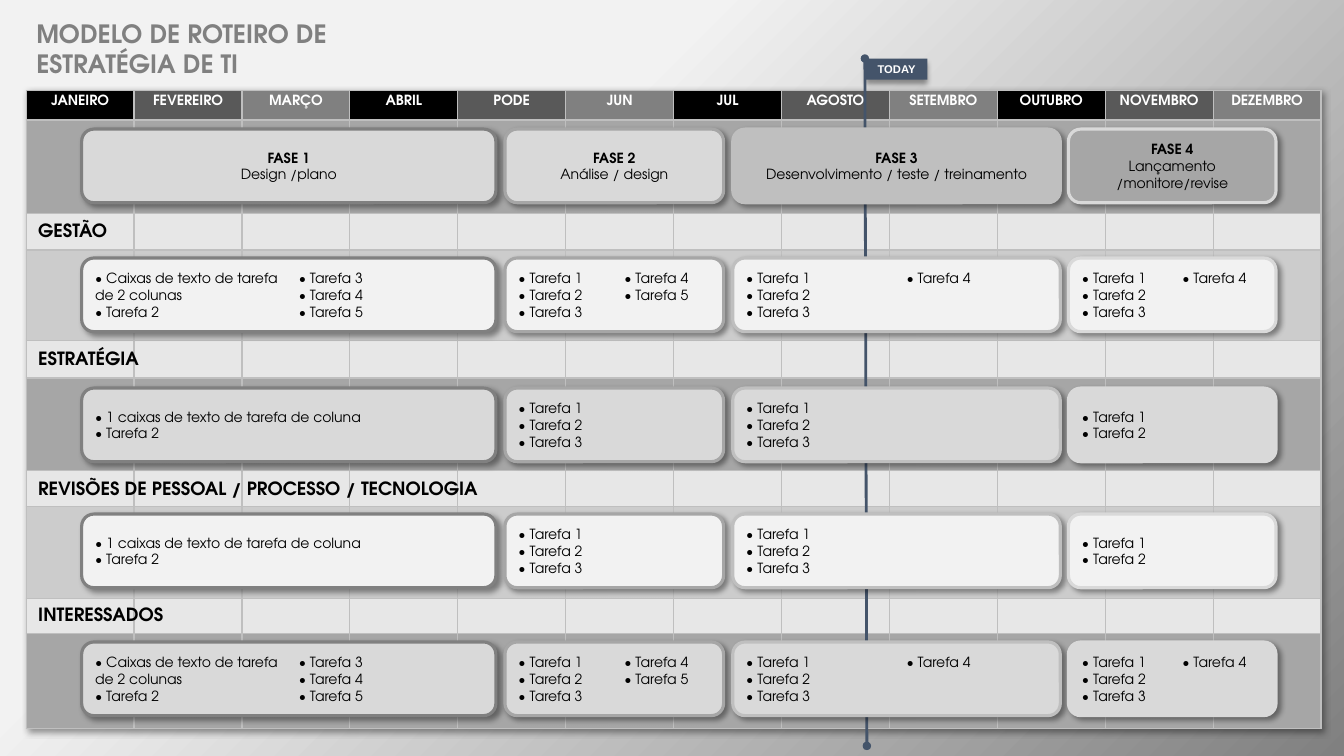
from dataclasses import dataclass
from itertools import product

from lxml.etree import SubElement
from pptx import Presentation
from pptx.dml.color import RGBColor
from pptx.enum.shapes import MSO_CONNECTOR as Connector, MSO_SHAPE as Shape
from pptx.enum.text import MSO_ANCHOR as Anchor, PP_ALIGN as Align
from pptx.oxml.ns import qn
from pptx.util import Pt


@dataclass(frozen=True)
class Theme:
    font: str = "TeX Gyre Adventor"
    flag_font: str = "Arial"
    title_size: float = 18
    section_size: float = 13
    body_size: float = 10
    flag_size: float = 8
    black: str = "000000"
    white: str = "FFFFFF"
    gray: str = "808080"
    pale: str = "F2F2F2"
    box: str = "D9D9D9"
    border: str = "BFBFBF"
    section: str = "E7E7E7"
    dark_band: str = "A6A6A6"
    light_band: str = "CCCCCC"
    today: str = "44546A"
    months: tuple = ("000000", "595959", "808080")
    outlines: tuple = ("808080", "A6A6A6", "BFBFBF", "D9D9D9")
    phases: tuple = ("D9D9D9", "D9D9D9", "BFBFBF", "A6A6A6")


THEME = Theme()
MONTHS = ["JANEIRO", "FEVEREIRO", "MARÇO", "ABRIL", "PODE", "JUN", "JUL",
          "AGOSTO", "SETEMBRO", "OUTUBRO", "NOVEMBRO", "DEZEMBRO"]
COLUMN_WIDTH = 77.1
ROW_HEIGHTS = [20.9, 67, 25.9, 64.8, 26.6, 66.2, 25.9, 65.5, 25.2, 67.7]
# Left edge and width of each phase
PHASE_SPANS = [(58.3, 295.9), (360.7, 156.2), (523.4, 234), (763.2, 148.3)]
PHASES = [("FASE 1", "Design /plano"), ("FASE 2", "Análise / design"),
          ("FASE 3", "Desenvolvimento / teste / treinamento"),
          ("FASE 4", "Lançamento /monitore/revise")]


def tasks(count, first="Tarefa 1"):
    names = [first] + [f"Tarefa {number}" for number in range(2, count + 1)]
    return [f"• {name}" for name in names]


TWO_COLUMNS = [tasks(5, "Caixas de texto de tarefa de 2 colunas"),
               tasks(5), tasks(4), tasks(4)]
ONE_COLUMN = [tasks(2, "1 caixas de texto de tarefa de coluna"),
              tasks(3), tasks(3), tasks(2)]
# Name, label top, box top, box fill, text columns, task lists
SECTIONS = [
    ("GESTÃO", 153.4, 184.3, THEME.pale, 2, TWO_COLUMNS),
    ("ESTRATÉGIA", 244.8, 277.2, THEME.box, 1, ONE_COLUMN),
    ("REVISÕES DE PESSOAL / PROCESSO / TECNOLOGIA", 337.7, 367.2,
     THEME.pale, 1, ONE_COLUMN),
    ("INTERESSADOS", 427.7, 458.6, THEME.box, 2, TWO_COLUMNS),
]


def color(value):
    return RGBColor.from_string(value)


def paint(target, value):
    target.fill.solid()
    target.fill.fore_color.rgb = color(value)


def write(para, text, size, ink, bold=False, align=Align.LEFT, font=THEME.font):
    para.text = text
    para.alignment = align
    for span in para.runs:
        for name, value in dict(name=font, size=Pt(size), bold=bold).items():
            setattr(span.font, name, value)
        span.font.color.rgb = color(ink)


def add_shadow(properties, angle):
    effects = SubElement(properties, qn("a:effectLst"))
    shadow = SubElement(effects, qn("a:outerShdw"), blurRad=str(Pt(4)),
                        dist=str(Pt(3)), dir=str(angle * 60000),
                        algn="tl", rotWithShape="0")
    black = SubElement(shadow, qn("a:srgbClr"), val=THEME.black)
    SubElement(black, qn("a:alpha"), val="40000")


def add_title(page):
    title = page.shapes.title
    for name, value in dict(left=18.7, top=9.4, width=301.7, height=50).items():
        setattr(title, name, Pt(value))
    frame = title.text_frame
    frame.word_wrap = False
    frame.vertical_anchor = Anchor.TOP
    write(frame.paragraphs[0], "MODELO DE ROTEIRO DE\vESTRATÉGIA DE TI",
          THEME.title_size, THEME.gray, bold=True)


def format_cell(cell, fill, margin):
    paint(cell, fill)
    cell.margin_top = cell.margin_bottom = Pt(margin)
    cell.margin_left = cell.margin_right = 0
    properties = cell._tc.tcPr
    for index, side in enumerate(("lnL", "lnR", "lnT", "lnB")):
        line = properties.makeelement(qn(f"a:{side}"), {"w": str(Pt(1))})
        ink = SubElement(line, qn("a:solidFill"))
        SubElement(ink, qn("a:srgbClr"), val=THEME.border)
        properties.insert(index, line)


def add_calendar(page):
    table = page.shapes.add_table(
        len(ROW_HEIGHTS), len(MONTHS), Pt(18.7), Pt(64.8),
        Pt(COLUMN_WIDTH * len(MONTHS)), Pt(sum(ROW_HEIGHTS))).table
    table.first_row = table.horz_banding = False
    properties = table._tbl.tblPr
    add_shadow(properties, 45)
    properties.insert(0, properties[-1])
    for column in table.columns:
        column.width = Pt(COLUMN_WIDTH)
    for row, height in zip(table.rows, ROW_HEIGHTS):
        row.height = Pt(height)
    # Below the months, bands alternate with section rows
    bands = [THEME.dark_band, THEME.section, THEME.light_band, THEME.section]
    for row, column in product(range(len(ROW_HEIGHTS)), range(len(MONTHS))):
        cell = table.cell(row, column)
        if row:
            format_cell(cell, bands[(row - 1) % 4], margin=0)
        else:
            format_cell(cell, THEME.months[column % 3], margin=3.6)
            write(cell.text_frame.paragraphs[0], MONTHS[column],
                  THEME.body_size, THEME.white, True, Align.CENTER)


def add_today(page):
    group = page.shapes.add_group_shape()
    flag = group.shapes.add_shape(Shape.SNIP_1_RECTANGLE, Pt(618.5), Pt(41.8),
                                  Pt(43.9), Pt(15.1))
    flag.adjustments[0] = 0
    paint(flag, THEME.today)
    flag.line.fill.background()
    add_shadow(flag._element.spPr, 90)
    flag.text_frame.word_wrap = False
    write(flag.text_frame.paragraphs[0], "TODAY", THEME.flag_size, THEME.white,
          True, Align.CENTER, THEME.flag_font)
    marker = group.shapes.add_connector(Connector.STRAIGHT, Pt(617.8), Pt(41.8),
                                        Pt(619.2), Pt(532.8))
    marker.line.color.rgb = color(THEME.today)
    marker.line.width = Pt(2)
    for end in ("headEnd", "tailEnd"):
        SubElement(marker.line._get_or_add_ln(), qn(f"a:{end}"), type="oval")
    SubElement(marker._element.spPr, qn("a:effectLst"))


def add_box(page, phase, top, fill, lines, columns=1, heading=False):
    left, width = PHASE_SPANS[phase]
    box = page.shapes.add_shape(Shape.ROUNDED_RECTANGLE, Pt(left), Pt(top),
                                Pt(width), Pt(52.6))
    paint(box, fill)
    box.line.color.rgb = color(THEME.outlines[phase])
    box.line.width = Pt(2.25)
    add_shadow(box._element.spPr, 45)
    frame = box.text_frame
    frame.vertical_anchor = Anchor.MIDDLE
    if columns > 1:
        frame._txBody.bodyPr.set("numCol", str(columns))
        frame._txBody.bodyPr.set("spcCol", str(Pt(14.4)))
    for index, line in enumerate(lines):
        para = frame.add_paragraph() if index else frame.paragraphs[0]
        write(para, line, THEME.body_size, THEME.black, heading and index == 0,
              Align.CENTER if heading else Align.LEFT)


def add_section_label(page, name, top):
    label = page.shapes.add_textbox(Pt(20.2), Pt(top), Pt(923.8), Pt(23))
    label.text_frame.word_wrap = True
    write(label.text_frame.paragraphs[0], name, THEME.section_size,
          THEME.black, bold=True)


def main():
    deck = Presentation()
    deck.slide_width, deck.slide_height = Pt(960), Pt(540)
    page = deck.slides.add_slide(deck.slide_layouts[5])

    # Background
    backdrop = page.background.fill
    backdrop.gradient()
    backdrop.gradient_angle = 315
    stops = [(0.34, THEME.pale), (1, THEME.gray)]
    for stop, (position, value) in zip(backdrop.gradient_stops, stops):
        stop.position = position
        stop.color.rgb = color(value)

    # Title, calendar and today marker
    add_title(page)
    add_calendar(page)
    add_today(page)

    # Phases and the tasks of each section
    for phase, lines in enumerate(PHASES):
        add_box(page, phase, 92.2, THEME.phases[phase], lines, heading=True)
    for name, label_top, box_top, fill, columns, task_lists in SECTIONS:
        add_section_label(page, name, label_top)
        for phase, lines in enumerate(task_lists):
            add_box(page, phase, box_top, fill, lines, columns)

    deck.save("out.pptx")


if __name__ == "__main__":
    main()
